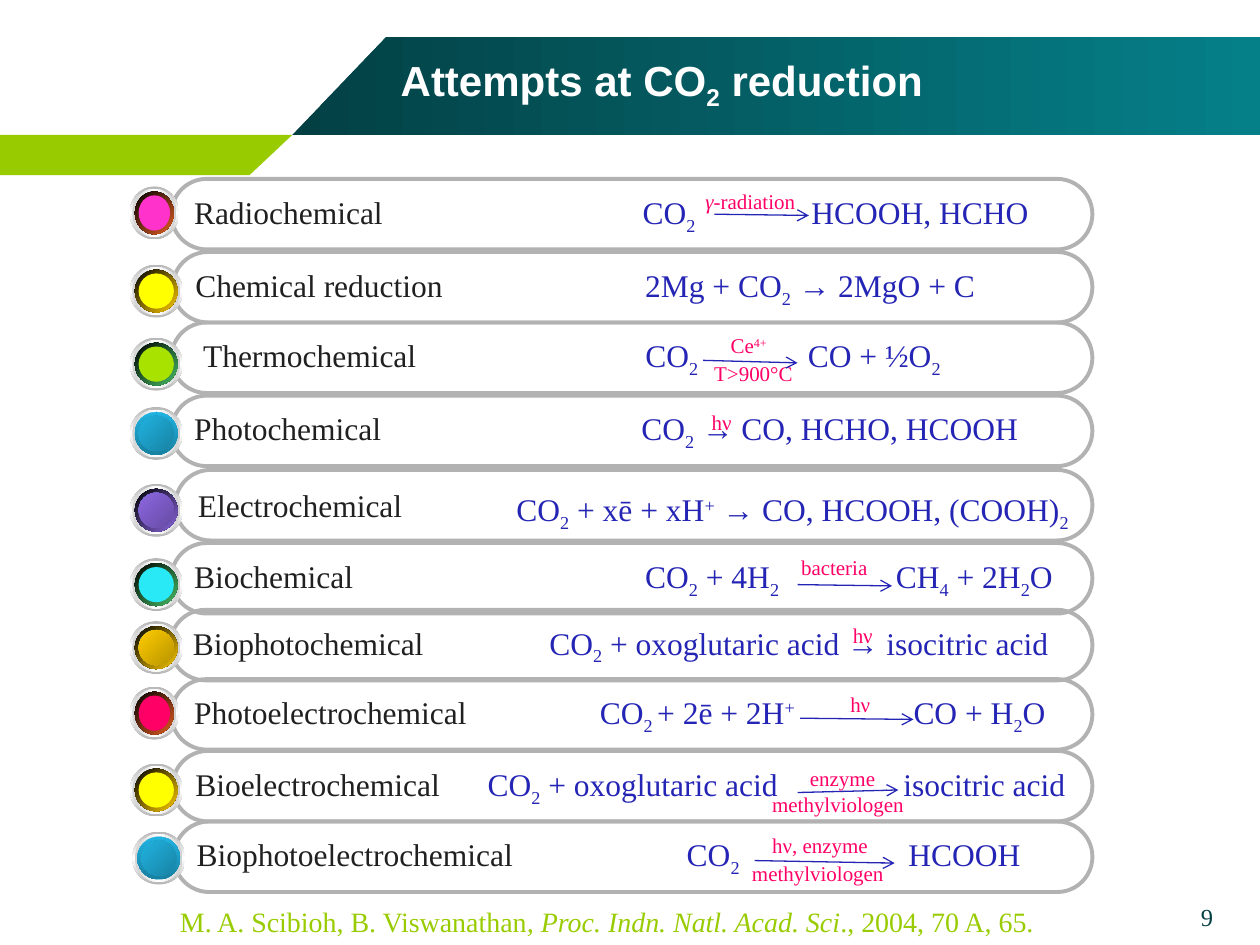
from lxml import etree
from pptx import Presentation
from pptx import util as u
from pptx.dml.color import RGBColor
from pptx.enum import shapes, text
from pptx.oxml import ns

INK = RGBColor(0x20, 0x20, 0x20)
BLUE = RGBColor(0x25, 0x25, 0xB5)
PINK = RGBColor(0xFF, 0x00, 0x66)
LIME = RGBColor(0x99, 0xCC, 0x00)
DEEP = RGBColor(0x03, 0x40, 0x44)
TEAL = RGBColor(0x05, 0x80, 0x89)
GREY = RGBColor(0xB2, 0xB2, 0xB2)
STEEL = RGBColor(0xB6, 0xB6, 0xB6)
PALE = RGBColor(0xD1, 0xD1, 0xD1)
WHITE = RGBColor(0xFF, 0xFF, 0xFF)
BLACK = RGBColor(0x00, 0x00, 0x00)
SKY = RGBColor(0x2C, 0xA9, 0xD0)
SEA = RGBColor(0x22, 0x81, 0x9F)
GOLD = RGBColor(0xFF, 0xCC, 0x00)
GREEN = RGBColor(0x48, 0xBE, 0x67)
RUST = RGBColor(0xE3, 0x5E, 0x23)
PLUM = RGBColor(0x8D, 0x67, 0xE1)
AQUA = RGBColor(0x21, 0xB3, 0xE1)
MARKS = {"_": ("baseline", "-25000"), "^": ("baseline", "30000"),
         "/": ("i", "1"), "*": ("b", "1")}


def bead(rim, *core, turn=45):
    return (([STEEL, WHITE, STEEL], 90), ([PALE, WHITE, PALE], 0),
            ([WHITE, SKY, WHITE], 45), (rim, turn)), core


def flat(rim, color):
    return bead([BLACK, rim], ([color], 0))


def shaded(rim, start, end, turn=45):
    return bead(rim, ([SEA, SKY, SEA], 315), ([start, end], 45), turn=turn)


OCEAN = shaded([AQUA, RGBColor(0x18, 0x80, 0xA1)], AQUA, RGBColor(0x18, 0x83, 0xA4), 90)
YELLOW = flat(GOLD, RGBColor(0xFF, 0xFF, 0x00))

ROWS = [
    (1.36, 1.42, "Radiochemical", [(5.1, "CO|_2"), (6.44, "HCOOH, HCHO")],
     (1.03, 1.48, 0.39), flat(RUST, RGBColor(0xFF, 0x33, 0xCC))),
    (1.37, 2.0, "Chemical reduction", [(5.12, "2Mg + CO|_2| → 2MgO + C")],
     (1.03, 2.1, 0.42), YELLOW),
    (1.36, 2.56, "Thermochemical", [(5.12, "CO|_2"), (6.41, "CO + ½O|_2")],
     (1.03, 2.68, 0.42), flat(GREEN, RGBColor(0xA7, 0xE2, 0x00))),
    (1.36, 3.14, "Photochemical", [(5.09, "CO|_2| |*→| CO, HCHO, HCOOH")],
     (1.03, 3.23, 0.42), OCEAN),
    (1.39, 3.73, "Electrochemical", [],
     (1.03, 3.84, 0.42), shaded([BLACK, PLUM], PLUM, RGBColor(0x67, 0x4B, 0xA4))),
    (1.36, 4.31, "Biochemical", [(5.12, "CO|_2| + 4H|_2"), (7.11, "CH|_4| + 2H|_2|O")],
     (1.03, 4.43, 0.42), flat(GREEN, RGBColor(0x2A, 0xE9, 0xF7))),
    (1.35, 4.84, "Biophotochemical", [(4.36, "CO|_2| + oxoglutaric acid → isocitric acid")],
     (1.03, 4.93, 0.42), shaded([BLACK, GOLD], GOLD, RGBColor(0xBA, 0x95, 0x00))),
    (1.36, 5.39, "Photoelectrochemical", [(4.76, "CO|_2 |+ 2ē + 2H|^+"), (7.25, "CO + H|_2|O")],
     (1.03, 5.45, 0.39), flat(RUST, PINK)),
    (1.37, 5.96, "Bioelectrochemical", [(3.87, "CO|_2| + oxoglutaric acid"), (7.17, "isocitric acid")],
     (1.03, 6.06, 0.42), YELLOW),
    (1.38, 6.52, "Biophotoelectrochemical", [(5.45, "CO|_2"), (7.21, "HCOOH")],
     (1.05, 6.6, 0.42), OCEAN),
]
NOTES = [
    (5.5, 1.45, 0.93, "/γ|-radiation"), (5.7, 2.59, 0.51, "Ce|^4+"),
    (5.57, 2.81, 0.83, "T>900°C"), (5.55, 3.2, 0.37, "hν"),
    (6.26, 4.35, 0.74, "bacteria"), (6.67, 4.89, 0.37, "hν"),
    (6.65, 5.44, 0.37, "hν"), (6.33, 6.03, 0.73, "enzyme"),
    (6.03, 6.23, 1.4, "methylviologen"), (6.03, 6.56, 1.01, "hν, enzyme"),
    (5.87, 6.78, 1.4, "methylviologen"),
]
ARROWS = [
    (5.67, 1.7, 6.42, 1.71), (5.58, 2.86, 6.33, 2.88), (6.33, 4.64, 7.08, 4.65),
    (6.35, 5.7, 7.25, 5.71), (6.33, 6.29, 7.13, 6.27), (5.99, 6.83, 7.1, 6.85),
]


class Deck:
    serif = "Times New Roman"

    def __init__(self):
        self.prs = Presentation()
        self.prs.slide_width, self.prs.slide_height = u.Inches(10), u.Inches(7.5)
        self.slide = self.prs.slides.add_slide(self.prs.slide_layouts[5])
        self.items = self.slide.shapes

    def runs(self, para, words, size, color, face=serif, bold=False):
        for part in words.split("|"):
            mark = MARKS.get(part[0])
            run = para.add_run()
            run.text = part[1:] if mark else part
            style = {"size": u.Pt(size), "name": face, "bold": bold}
            for key, value in style.items():
                setattr(run.font, key, value)
            run.font.color.rgb = color
            if mark:
                run.font._element.set(*mark)

    def paint(self, shape, colors, turn=0):
        shape.shadow.inherit = False
        shape.line.fill.background()
        if len(colors) == 1:
            shape.fill.solid()
            shape.fill.fore_color.rgb = colors[0]
            return
        shape.fill.gradient()
        shape.fill.gradient_angle = (360 - turn) % 360
        stops = shape.element.spPr.find(".//" + ns.qn("a:gsLst"))
        for stop in list(stops):
            stops.remove(stop)
        for i, color in enumerate(colors):
            place = str(100000 * i // (len(colors) - 1))
            stop = etree.SubElement(stops, ns.qn("a:gs"), pos=place)
            etree.SubElement(stop, ns.qn("a:srgbClr"), val=str(color))

    def band(self, points, colors):
        first, *rest = [(u.Inches(x), u.Inches(y)) for x, y in points]
        form = self.items.build_freeform(*first)
        form.add_line_segments(rest, close=True)
        self.paint(form.convert_to_shape(), colors)

    def pill(self, left, top, label, stops):
        shape = self.items.add_shape(shapes.MSO_SHAPE.ROUNDED_RECTANGLE, u.Inches(left),
                                     u.Inches(top), u.Inches(8.67 - left), u.Inches(0.56))
        shape.adjustments[0] = 0.5
        shape.shadow.inherit = False
        shape.fill.background()
        shape.line.color.rgb = GREY
        shape.line.width = u.Pt(2.25)
        frame = shape.text_frame
        inset = 0.17 if label == "Thermochemical" else 0.1
        style = {"word_wrap": True, "margin_left": u.Inches(inset), "margin_right": 0,
                 "vertical_anchor": text.MSO_ANCHOR.MIDDLE}
        for key, value in style.items():
            setattr(frame, key, value)
        para = frame.paragraphs[0]
        para.alignment = text.PP_ALIGN.LEFT
        if stops:
            tabs = etree.SubElement(para._p.get_or_add_pPr(), ns.qn("a:tabLst"))
            for x, _ in stops:
                place = u.Inches(x - left - inset - 0.08)
                etree.SubElement(tabs, ns.qn("a:tab"), pos=str(int(place)), algn="l")
        self.runs(para, label, 18, INK)
        for _, words in stops:
            self.runs(para, "\t" + words, 18, BLUE)

    def button(self, left, top, width, layers):
        group = self.items.add_group_shape()
        rings, core = layers
        gaps = [0, 0.02, 0.04, 0.04] + [0.07] * len(core)
        for gap, (colors, turn) in zip(gaps, rings + core):
            disc = group.shapes.add_shape(
                shapes.MSO_SHAPE.OVAL, u.Inches(left + gap), u.Inches(top + gap),
                u.Inches(width - 2 * gap), u.Inches(0.42 - 2 * gap))
            self.paint(disc, colors, turn)

    def label(self, left, top, width, height, words, size, color, wrap=True, align="LEFT"):
        box = self.items.add_textbox(*map(u.Inches, (left, top, width, height)))
        box.text_frame.word_wrap = wrap
        para = box.text_frame.paragraphs[0]
        para.alignment = text.PP_ALIGN[align]
        self.runs(para, words, size, color)

    def arrow(self, *ends):
        line = self.items.add_connector(shapes.MSO_CONNECTOR.STRAIGHT, *map(u.Inches, ends))
        line.line.color.rgb = BLUE
        line.line.width = u.Pt(0.75)
        etree.SubElement(line.line._get_or_add_ln(), ns.qn("a:tailEnd"), type="arrow")
        etree.SubElement(line._element.spPr, ns.qn("a:effectLst"))

    def title(self, words):
        head = self.items.title
        area = {"left": 3.08, "top": 0.41, "width": 6.67, "height": 0.5}
        for key, value in area.items():
            setattr(head, key, u.Inches(value))
        head.text_frame.vertical_anchor = text.MSO_ANCHOR.MIDDLE
        para = head.text_frame.paragraphs[0]
        para.alignment = text.PP_ALIGN.LEFT
        self.runs(para, words, 24, WHITE, "Arial", True)
        head.element.getparent().append(head.element)


def main():
    deck = Deck()
    deck.band([(2.32, 1.07), (10, 1.07), (10, 0.29), (3.07, 0.29)], [DEEP, TEAL])
    deck.band([(0, 1.07), (2.32, 1.07), (1.98, 1.39), (0, 1.39)], [LIME])
    for left, top, name, stops, spot, layers in ROWS:
        deck.pill(left, top, name, stops)
        deck.button(*spot, layers)
    deck.label(4, 3.84, 5.08, 0.4, "CO|_2| + xē + xH|^+| → CO, HCOOH, (COOH)|_2", 18, BLUE)
    for left, top, width, words in NOTES:
        deck.label(left, top, width, 0.3, words, 12, PINK, wrap=False)
    for ends in ARROWS:
        deck.arrow(*ends)
    deck.label(1.33, 7.13, 7.25, 0.37,
               "M. A. Scibioh, B. Viswanathan|/, Proc. Indn. Natl. Acad. Sci|., 2004, 70 A, 65.",
               16, LIME)
    deck.label(9.16, 7.11, 0.84, 0.35, "9", 14, DEEP, align="CENTER")
    deck.title("Attempts at CO|_2| reduction")
    deck.prs.save("out.pptx")


if __name__ == "__main__":
    main()
